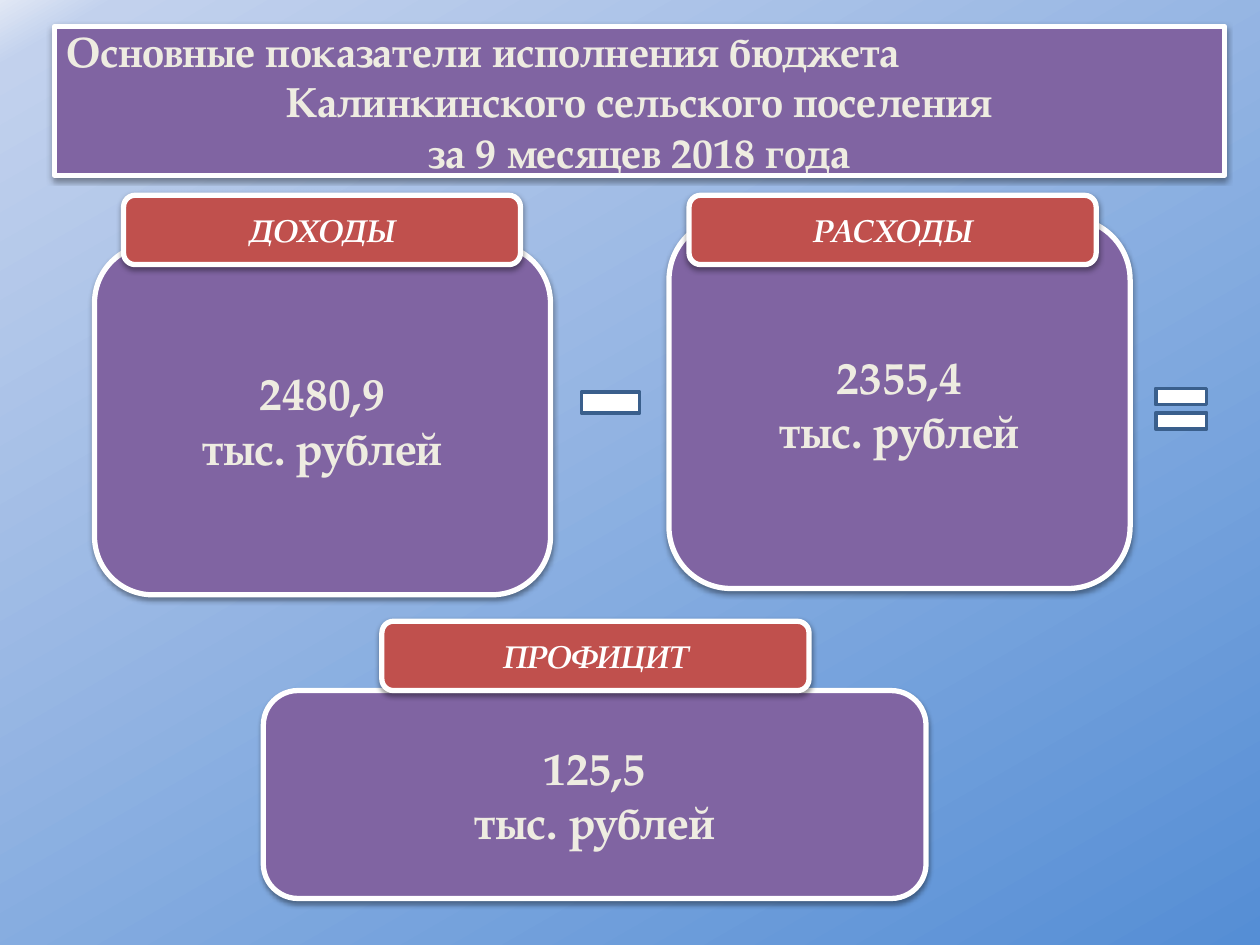
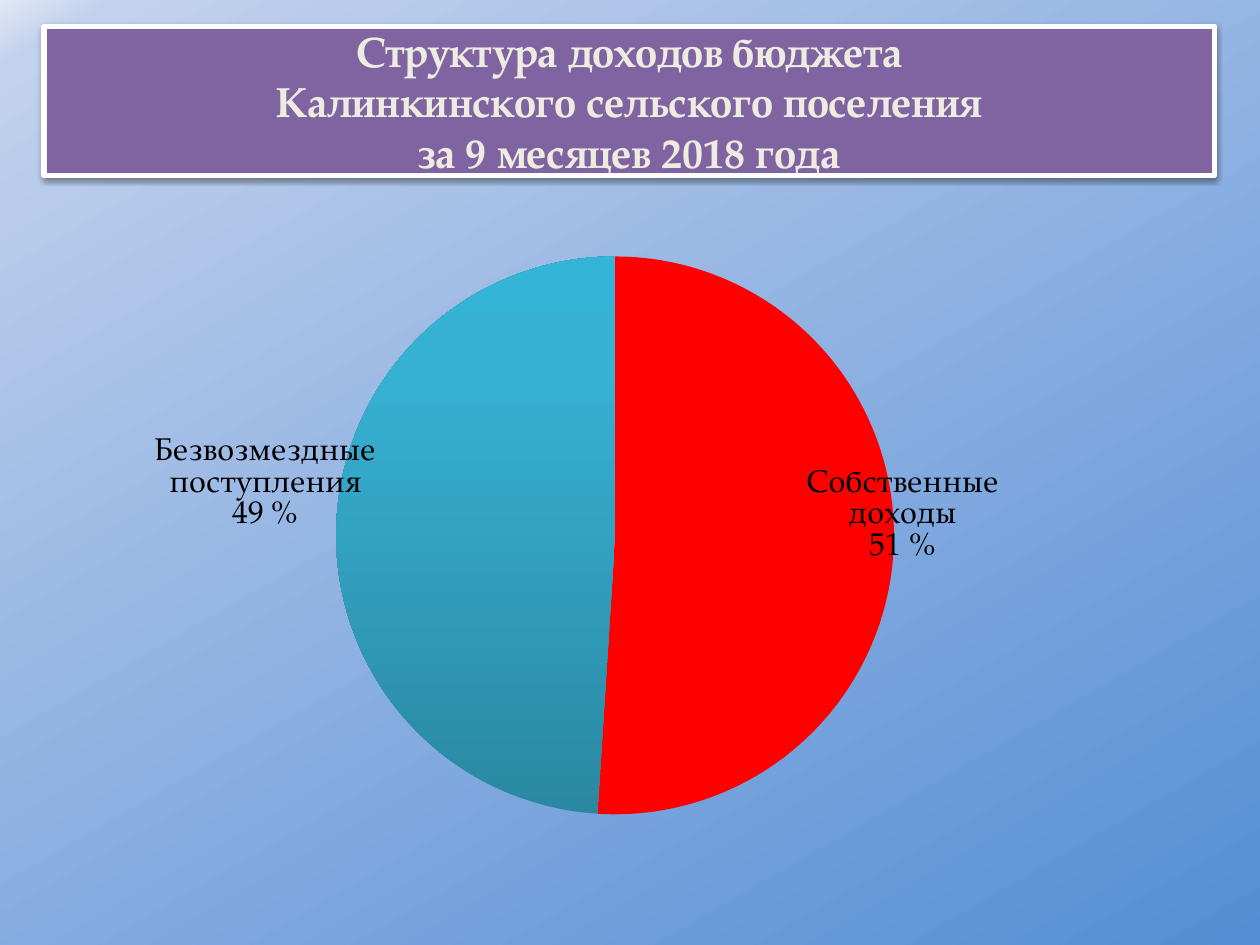
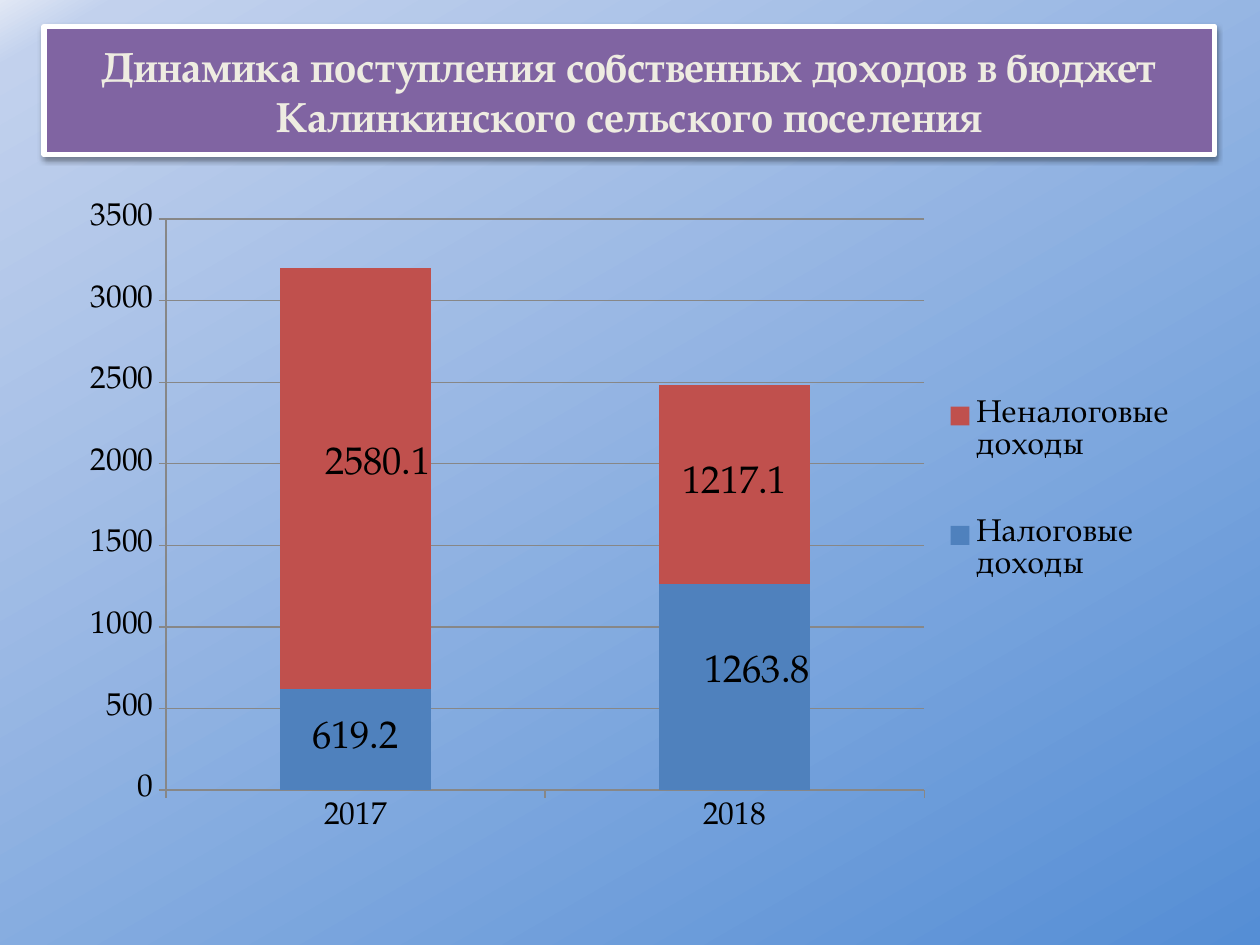
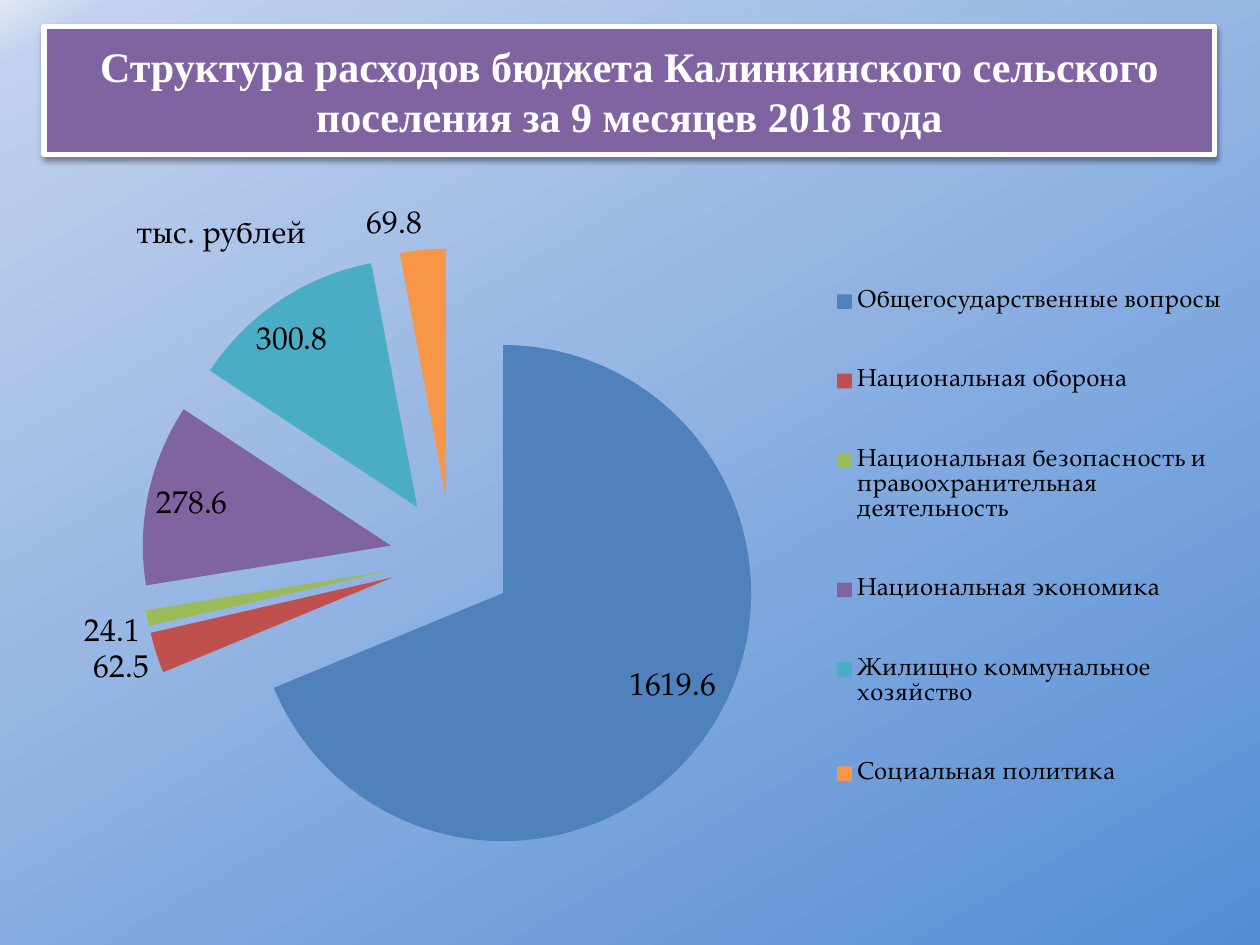
from pptx import Presentation
from pptx.chart.data import CategoryChartData
from pptx.dml.color import RGBColor
from pptx.enum.chart import XL_CHART_TYPE as CHART, XL_LABEL_POSITION as POS
from pptx.enum.chart import XL_LEGEND_POSITION as LEGEND, XL_TICK_MARK as TICK
from pptx.enum.shapes import MSO_SHAPE as SHAPE
from pptx.enum.text import MSO_ANCHOR as ANCHOR, MSO_AUTO_SIZE as FIT, PP_ALIGN as ALIGN
from pptx.oxml import parse_xml
from pptx.oxml.ns import nsdecls, qn
from pptx.util import Pt

# Shared style
C = {"purple": "8064A2", "red": "C0504D", "white": "FFFFFF", "cream": "EEECE1",
     "black": "000000", "blue": "4F81BD", "edge": "3A5F8C", "green": "9BBB59",
     "aqua": "4BACC6", "orange": "F79646", "bright": "FF0000", "grid": "878787"}
SERIF = "TeX Gyre Pagella"
BACKDROP = [(0, "558ED5"), (96, "C2D1ED"), (100, "E1E8F5")]
TEAL = [(0, "2A88A2"), (80, "37B1D2"), (100, "34B4D6")]
HEAD = {"size": Pt(24), "name": SERIF, "bold": True}
AMOUNT = {"size": Pt(26), "name": SERIF, "bold": True}
CAPTION = {"size": Pt(18), "name": SERIF, "bold": True, "italic": True}
PLAIN = {"size": Pt(18), "name": SERIF}
LABEL = {"size": Pt(22), "name": SERIF}
KEY = {"size": Pt(14), "name": SERIF}


def rgb(name):
    return RGBColor.from_string(C[name])


def set_font(font, fmt, color="black"):
    for key, value in fmt.items():
        setattr(font, key, value)
    font.color.rgb = rgb(color)


def set_gradient(fill, root, stops, angle):
    """Turn fill, the first gradient below root, into the given stops."""
    fill.gradient()
    old = root.find(".//" + qn("a:gradFill"))
    gs = "".join(f'<a:gs pos="{pos * 1000}"><a:srgbClr val="{color}"/></a:gs>'
                 for pos, color in stops)
    old.getparent().replace(old, parse_xml(
        f'<a:gradFill {nsdecls("a")} rotWithShape="1"><a:gsLst>{gs}</a:gsLst>'
        f'<a:lin ang="{angle * 60000}" scaled="0"/></a:gradFill>'))


def set_layout(parent, index, head="", **sizes):
    """Give a chart part a manual layout, in fractions of the chart."""
    for old in parent.findall(qn("c:layout")):
        parent.remove(old)
    body = head + "".join(f'<c:{k} val="{v}"/>' for k, v in sizes.items())
    parent.insert(index, parse_xml(
        f'<c:layout {nsdecls("c")}><c:manualLayout>{body}</c:manualLayout></c:layout>'))


class Deck:
    EDGE = '<c:xMode val="edge"/><c:yMode val="edge"/>'
    INNER = '<c:layoutTarget val="inner"/>' + EDGE

    def __init__(self):
        self.prs = Presentation()
        self.prs.slide_width, self.prs.slide_height = Pt(720), Pt(540)
        master = self.prs.slide_master
        set_gradient(master.background.fill, master.element, BACKDROP, 240)
        self.s = None

    def put_lines(self, tf, lines, fmt, color, aligns=()):
        for i, line in enumerate(lines):
            p = tf.paragraphs[0] if i == 0 else tf.add_paragraph()
            p.alignment = aligns[i] if i < len(aligns) else ALIGN.CENTER
            r = p.add_run()
            r.text = line
            set_font(r.font, fmt, color)

    def paint(self, sp, fill, line="white", width=3):
        sp.fill.solid()
        sp.fill.fore_color.rgb = rgb(fill)
        sp.line.color.rgb = rgb(line)
        sp.line.width = Pt(width)
        sp.shadow.inherit = False

    def cast_shadow(self, sp):
        effects = sp.element.spPr.find(qn("a:effectLst"))
        effects.append(parse_xml(
            f'<a:outerShdw {nsdecls("a")} blurRad="{Pt(3.1)}" dist="{Pt(1.6)}" '
            'dir="5400000" rotWithShape="0"><a:srgbClr val="000000">'
            '<a:alpha val="38000"/></a:srgbClr></a:outerShdw>'))

    def slide(self, lines, left=25.2, height=73.4, fmt=HEAD, color="cream", aligns=()):
        """Add a slide with its title in a rounded band."""
        self.s = self.prs.slides.add_slide(self.prs.slide_layouts[5])
        sp = self.s.shapes.title
        sp.left, sp.top, sp.width, sp.height = map(Pt, (left, 15.1, 668.9, height))
        sp.element.spPr.append(parse_xml(
            f'<a:prstGeom {nsdecls("a")} prst="roundRect"><a:avLst/></a:prstGeom>'))
        self.paint(sp, "purple")
        self.cast_shadow(sp)
        tf = sp.text_frame
        tf.auto_size, tf.vertical_anchor = FIT.NONE, ANCHOR.MIDDLE
        self.put_lines(tf, lines, fmt, color, aligns)

    def box(self, at, lines, fill, fmt, color):
        sp = self.s.shapes.add_shape(SHAPE.ROUNDED_RECTANGLE, *map(Pt, at))
        self.paint(sp, fill)
        self.cast_shadow(sp)
        tf = sp.text_frame
        tf.word_wrap, tf.vertical_anchor = True, ANCHOR.MIDDLE
        self.put_lines(tf, lines, fmt, color)

    def sign(self, kind, at):
        sp = self.s.shapes.add_shape(kind, *map(Pt, at))
        self.paint(sp, "white", "edge", 2)

    def text(self, at, line, fmt):
        tf = self.s.shapes.add_textbox(*map(Pt, at)).text_frame
        tf.word_wrap = False
        self.put_lines(tf, [line], fmt, "black")

    def chart(self, kind, at, cats, series, plot):
        data = CategoryChartData()
        data.categories = cats
        for name, values in series:
            data.add_series(name, values)
        chart = self.s.shapes.add_chart(kind, *map(Pt, at), data).chart
        chart.has_title = chart.has_legend = False
        set_font(chart.font, PLAIN)
        area = chart._chartSpace.find(".//" + qn("c:plotArea"))
        set_layout(area, 0, self.INNER, **dict(zip("xywh", plot)))
        return chart

    def legend(self, chart, fmt, place):
        chart.has_legend = True
        legend = chart.legend
        legend.position, legend.include_in_layout = LEGEND.RIGHT, False
        set_font(legend.font, fmt)
        set_layout(legend._element, 1, self.EDGE, **dict(zip("xywh", place)))

    def color_points(self, series, colors):
        for i, color in enumerate(colors):
            fill = series.points[i].format.fill
            fill.solid()
            fill.fore_color.rgb = rgb(color)

    def value_labels(self, owner, fmt, position):
        labels = owner.data_labels
        labels.show_value, labels.position = True, position
        set_font(labels.font, fmt)

    def shift_labels(self, series, shifts):
        for dlbl, (x, y) in zip(list(series._element.iter(qn("c:dLbl"))), shifts):
            set_layout(dlbl, 1, x=x, y=y)


def main():
    deck = Deck()
    unit = "тыс. рублей"

    # Slide 1: income minus expenses equals surplus
    deck.slide(["Основные показатели исполнения бюджета",
                "Калинкинского сельского поселения", "за 9 месяцев 2018 года"],
               left=31, height=85, aligns=[ALIGN.LEFT])
    groups = [("ДОХОДЫ", (70.6, 111.6, 226.8, 39.6), "2480,9", (54, 139.7, 260.6, 200.2)),
              ("РАСХОДЫ", (393.8, 111.6, 232.6, 39.6), "2355,4", (382.3, 124.6, 263.5, 211.7)),
              ("ПРОФИЦИТ", (218.2, 355, 244.1, 39.6), "125,5", (150.5, 394.6, 378.7, 118.8))]
    for caption, tab, amount, body in groups:
        deck.box(body, [amount, unit], "purple", AMOUNT, "cream")
        deck.box(tab, [caption], "red", CAPTION, "white")
    deck.sign(SHAPE.MATH_MINUS, (326.2, 204.5, 45.4, 51.1))
    deck.sign(SHAPE.MATH_EQUAL, (655.2, 213.8, 39.6, 39.6))

    # Slide 2: income structure
    deck.slide(["Структура доходов бюджета", "Калинкинского сельского поселения",
                "за 9 месяцев 2018 года"], height=85)
    chart = deck.chart(CHART.PIE, (15.8, 111.6, 678.2, 388.8), ["1", "2"],
                       [("Доходы", (51, 49))], (0.12, 0.09, 0.75, 0.82))
    pie = chart.plots[0].series[0]
    deck.color_points(pie, ["bright"])
    set_gradient(pie.points[1].format.fill, pie._element, TEAL, 270)
    for i, lines in enumerate([("Собственные", "доходы", "51 %"),
                               ("Безвозмездные", "поступления", "49 %")]):
        label = pie.points[i].data_label
        deck.put_lines(label.text_frame, lines, PLAIN, "black")
        label.position = POS.OUTSIDE_END
    deck.shift_labels(pie, [(-0.08, -0.04), (0.04, -0.06)])

    # Slide 3: own income by year
    deck.slide(["Динамика поступления собственных доходов в бюджет "
                "Калинкинского сельского поселения"])
    chart = deck.chart(CHART.COLUMN_STACKED, (36.7, 110.2, 646.6, 375.1), ["2017", "2018"],
                       [("Налоговые доходы", (619.2, 1263.8)),
                        ("Неналоговые доходы", (2580.1, 1217.1))],
                       (0.09, 0.04, 0.67, 0.87))
    deck.legend(chart, PLAIN, (0.77, 0.23, 0.22, 0.45))
    plot = chart.plots[0]
    plot.gap_width, plot.overlap = 150, 100
    for series, color, moved in zip(plot.series, ("blue", "red"), (1, 0)):
        series.format.fill.solid()
        series.format.fill.fore_color.rgb = rgb(color)
        deck.value_labels(series, LABEL, POS.CENTER)
        label = series.points[moved].data_label
        label.position = POS.CENTER
        set_font(label.font, LABEL)
        deck.shift_labels(series, [(0.02, -0.02)])
    for axis in (chart.category_axis, chart.value_axis):
        axis.major_tick_mark, axis.minor_tick_mark = TICK.OUTSIDE, TICK.NONE
        axis.format.line.color.rgb = rgb("grid")
        set_font(axis.tick_labels.font, PLAIN)
    axis = chart.value_axis
    axis.minimum_scale, axis.maximum_scale, axis.major_unit = 0, 3500, 500
    axis.major_gridlines.format.line.color.rgb = rgb("grid")

    # Slide 4: expense structure
    deck.slide(["Структура расходов бюджета Калинкинского сельского "
                "поселения за 9 месяцев 2018 года"],
               fmt={**HEAD, "name": "Times New Roman"}, color="white")
    expenses = {"Общегосударственные вопросы": 1619.6, "Национальная оборона": 62.5,
                "Национальная безопасность и правоохранительная деятельность": 24.1,
                "Национальная экономика": 278.6, "Жилищно коммунальное хозяйство": 300.8,
                "Социальная политика": 69.8}
    chart = deck.chart(CHART.PIE_EXPLODED, (8.6, 110.2, 702.7, 398.2), list(expenses),
                       [("Расходы", list(expenses.values()))], (0.1, 0.08, 0.51, 0.89))
    deck.legend(chart, KEY, (0.66, 0.06, 0.33, 0.87))
    plot = chart.plots[0]
    plot.vary_by_categories = True
    deck.color_points(plot.series[0], ["blue", "red", "green", "purple", "aqua", "orange"])
    deck.value_labels(plot.series[0], PLAIN, POS.BEST_FIT)
    deck.text((70.6, 117.4, 111.6, 28.8), unit, PLAIN)

    deck.prs.save("out.pptx")


if __name__ == "__main__":
    main()
